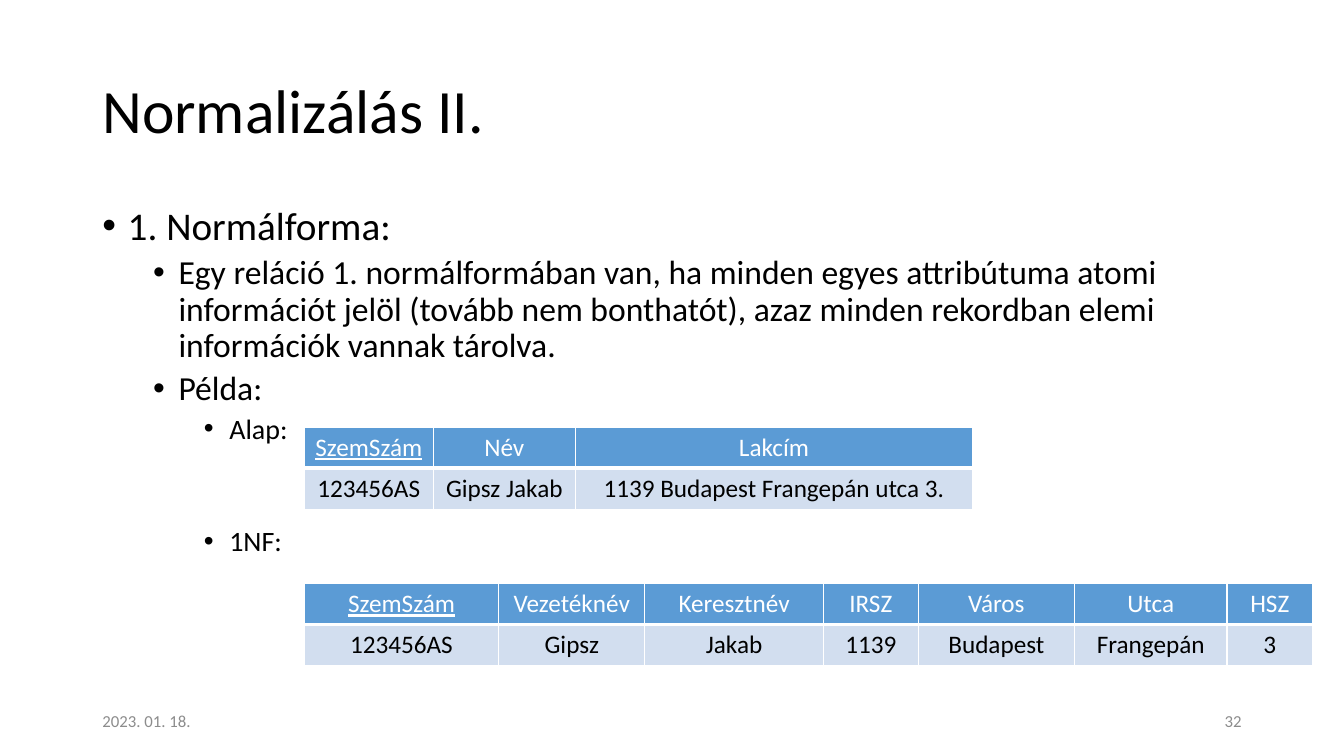
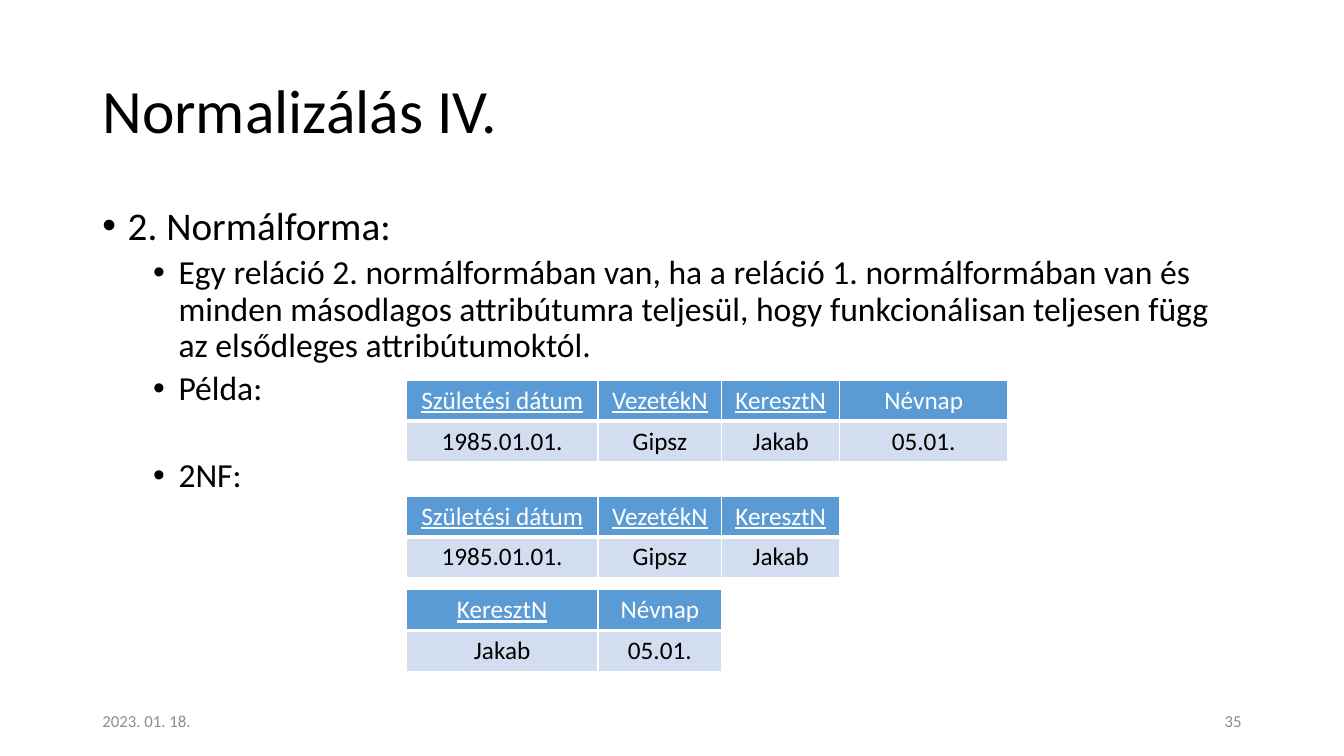
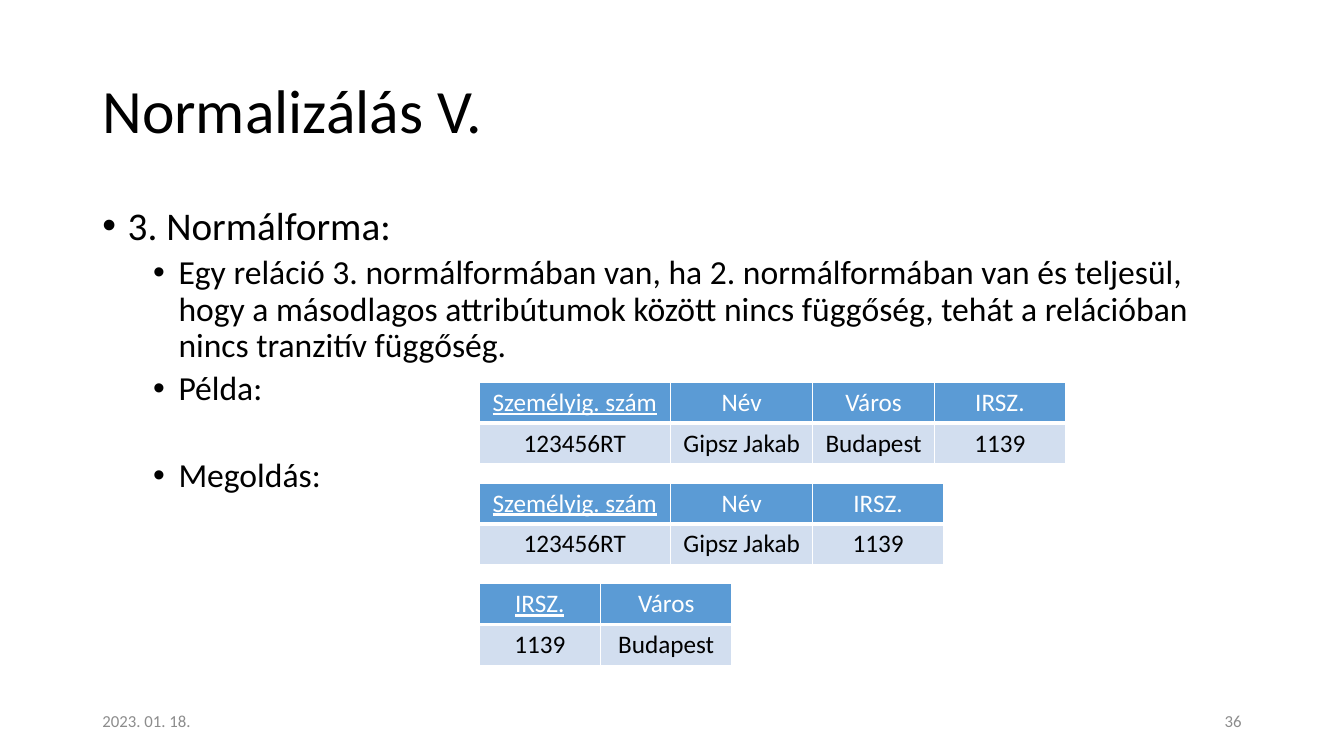
from dataclasses import dataclass

from lxml import etree
from pptx import Presentation
from pptx.dml.color import RGBColor
from pptx.enum.text import MSO_ANCHOR as Anchor, PP_ALIGN as Align
from pptx.oxml.ns import qn
from pptx.util import Cm, Pt


@dataclass(frozen=True)
class Theme:
    font: str = "Calibri"
    text: str = "000000"
    muted: str = "8C8C8C"
    header_text: str = "FFFFFF"
    header_fill: str = "5B9BD5"
    row_fill: str = "D2DEEF"
    border: str = "FFFFFF"
    title_size: int = 44
    body_sizes: tuple = (28, 24, 20)
    table_size: int = 18
    footer_size: int = 12
    line_spacing: float = 0.9


THEME = Theme()
DATE = "2023. 01. 18."

# Boxes in cm: left, top, width, height
TITLE_BOX = (2.33, 1.02, 29.21, 3.68)
BODY_BOX = (2.33, 5.08, 29.21, 12.09)
FOOTER_BOX = (2.33, 17.65, 29.21, 1.02)
FOOTER_PART = 7.62
ROW_HEIGHT = 1.03
BULLET_INDENT = 0.64


def style_paragraph(paragraph, size, color=THEME.text, align=Align.LEFT, underline=False):
    paragraph.alignment = align
    for run in paragraph.runs:
        font = run.font
        font.name, font.size = THEME.font, Pt(size)
        font.color.rgb = RGBColor.from_string(color)
        font.bold, font.underline = False, underline


def add_text_frame(slide, box, anchor=Anchor.MIDDLE):
    text_frame = slide.shapes.add_textbox(*map(Cm, box)).text_frame
    text_frame.word_wrap = True
    text_frame.vertical_anchor = anchor
    return text_frame


def add_title(slide, box, title):
    text_frame = add_text_frame(slide, box)
    text_frame.text = title
    paragraph = text_frame.paragraphs[0]
    paragraph.line_spacing = THEME.line_spacing
    style_paragraph(paragraph, THEME.title_size)


def add_bullets(slide, box, bullets):
    """Each bullet is (level, text, space before in points)."""
    text_frame = add_text_frame(slide, box, Anchor.TOP)
    for index, (level, text, space) in enumerate(bullets):
        paragraph = text_frame.add_paragraph() if index else text_frame.paragraphs[0]
        paragraph.text = text
        paragraph.level = level
        paragraph.line_spacing = THEME.line_spacing
        paragraph.space_before = Pt(space)
        style_paragraph(paragraph, THEME.body_sizes[level])
        # Hanging bullet, two indents further in per level
        properties = paragraph._p.get_or_add_pPr()
        properties.set("marL", str(Cm(BULLET_INDENT * (1 + 2 * level))))
        properties.set("indent", str(-Cm(BULLET_INDENT)))
        etree.SubElement(properties, qn("a:buFont"), typeface="Arial")
        etree.SubElement(properties, qn("a:buChar"), char="•")


def add_footer(slide, box, number):
    left, top, width, height = box
    right_part = left + width - FOOTER_PART
    for part_left, text, align in ((left, DATE, Align.LEFT),
                                   (right_part, str(number), Align.RIGHT)):
        text_frame = add_text_frame(slide, (part_left, top, FOOTER_PART, height))
        text_frame.text = text
        style_paragraph(text_frame.paragraphs[0], THEME.footer_size, THEME.muted, align)


def set_borders(cell, bottom_width):
    properties = cell._tc.get_or_add_tcPr()
    for index, (side, width) in enumerate(
            (("L", 1), ("R", 1), ("T", 1), ("B", bottom_width))):
        line = etree.Element(qn(f"a:ln{side}"), w=str(Pt(width)))
        fill = etree.SubElement(line, qn("a:solidFill"))
        etree.SubElement(fill, qn("a:srgbClr"), val=THEME.border)
        properties.insert(index, line)


def add_relation(slide, left, top, columns, key_count):
    """Each column is (heading, value, width); the first key_count are keys."""
    headings, values, widths = zip(*columns)
    table = slide.shapes.add_table(
        2, len(columns), Cm(left), Cm(top), Cm(sum(widths)), Cm(2 * ROW_HEIGHT)).table
    for column, width in zip(table.columns, widths):
        column.width = Cm(width)
    row_styles = ((headings, THEME.header_fill, THEME.header_text, key_count, 3),
                  (values, THEME.row_fill, THEME.text, 0, 1))
    for row, (texts, fill, color, underlined, bottom_width) in zip(table.rows, row_styles):
        row.height = Cm(ROW_HEIGHT)
        for index, (cell, text) in enumerate(zip(row.cells, texts)):
            cell.text_frame.text = text
            cell.fill.solid()
            cell.fill.fore_color.rgb = RGBColor.from_string(fill)
            style_paragraph(cell.text_frame.paragraphs[0], THEME.table_size, color,
                            Align.CENTER, index < underlined)
            set_borders(cell, bottom_width)


def add_normal_form_slide(presentation, number, title, bullets, table_left, relations):
    slide = presentation.slides.add_slide(presentation.slide_layouts[6])
    add_title(slide, TITLE_BOX, title)
    add_bullets(slide, BODY_BOX, bullets)
    add_footer(slide, FOOTER_BOX, number)
    for top, key_count, columns in relations:
        add_relation(slide, table_left, top, columns, key_count)


# Columns that several relations share
BIRTH = ("Születési dátum", "1985.01.01.", 4.83)
LAST_NAME = ("VezetékN", "Gipsz", 3.12)
FIRST_NAME = ("KeresztN", "Jakab", 2.97)
ID_CARD = ("Személyig. szám", "123456RT", 4.83)
NAME = ("Név", "Gipsz Jakab", 3.58)
POSTCODE = ("IRSZ.", "1139", 3.3)

SLIDES = (
    dict(
        number=32, title="Normalizálás II.", table_left=7.67,
        bullets=(
            (0, "1. Normálforma:", 10),
            (1, "Egy reláció 1. normálformában van, ha minden egyes attribútuma atomi "
                "információt jelöl (tovább nem bonthatót), azaz minden rekordban elemi "
                "információk vannak tárolva.", 5),
            (1, "Példa:", 5),
            (2, "Alap:", 5),
            (2, "1NF:", 58.5),
        ),
        relations=(
            (10.77, 1, (("SzemSzám", "123456AS", 3.25), NAME,
                        ("Lakcím", "1139 Budapest Frangepán utca 3.", 10.01))),
            (14.71, 1, (("SzemSzám", "123456AS", 4.9), ("Vezetéknév", "Gipsz", 3.68),
                        ("Keresztnév", "Jakab", 4.5), ("IRSZ", "1139", 2.39),
                        ("Város", "Budapest", 3.94), ("Utca", "Frangepán", 3.84),
                        ("HSZ", "3", 2.16))),
        ),
    ),
    dict(
        number=35, title="Normalizálás IV.", table_left=10.24,
        bullets=(
            (0, "2. Normálforma:", 10),
            (1, "Egy reláció 2. normálformában van, ha a reláció 1. normálformában van és "
                "minden másodlagos attribútumra teljesül, hogy funkcionálisan teljesen "
                "függ az elsődleges attribútumoktól.", 5),
            (1, "Példa:", 5),
            (1, "2NF:", 36),
        ),
        relations=(
            (9.58, 3, (BIRTH, LAST_NAME, FIRST_NAME, ("Névnap", "05.01.", 4.24))),
            (12.5, 3, (BIRTH, LAST_NAME, FIRST_NAME)),
            (14.86, 1, (("KeresztN", "Jakab", 4.83), ("Névnap", "05.01.", 3.12))),
        ),
    ),
    dict(
        number=36, title="Normalizálás V.", table_left=12.07,
        bullets=(
            (0, "3. Normálforma:", 10),
            (1, "Egy reláció 3. normálformában van, ha 2. normálformában van és teljesül, "
                "hogy a másodlagos attribútumok között nincs függőség, tehát a relációban "
                "nincs tranzitív függőség.", 5),
            (1, "Példa:", 5),
            (1, "Megoldás:", 36),
        ),
        relations=(
            (9.63, 1, (ID_CARD, NAME, ("Város", "Budapest", 3.07), POSTCODE)),
            (12.17, 1, (ID_CARD, NAME, POSTCODE)),
            (14.71, 1, (("IRSZ.", "1139", 3.07), ("Város", "Budapest", 3.3))),
        ),
    ),
)


def main():
    presentation = Presentation()
    presentation.slide_width, presentation.slide_height = Cm(33.87), Cm(19.05)
    for content in SLIDES:
        add_normal_form_slide(presentation, **content)
    presentation.save("out.pptx")


if __name__ == "__main__":
    main()
